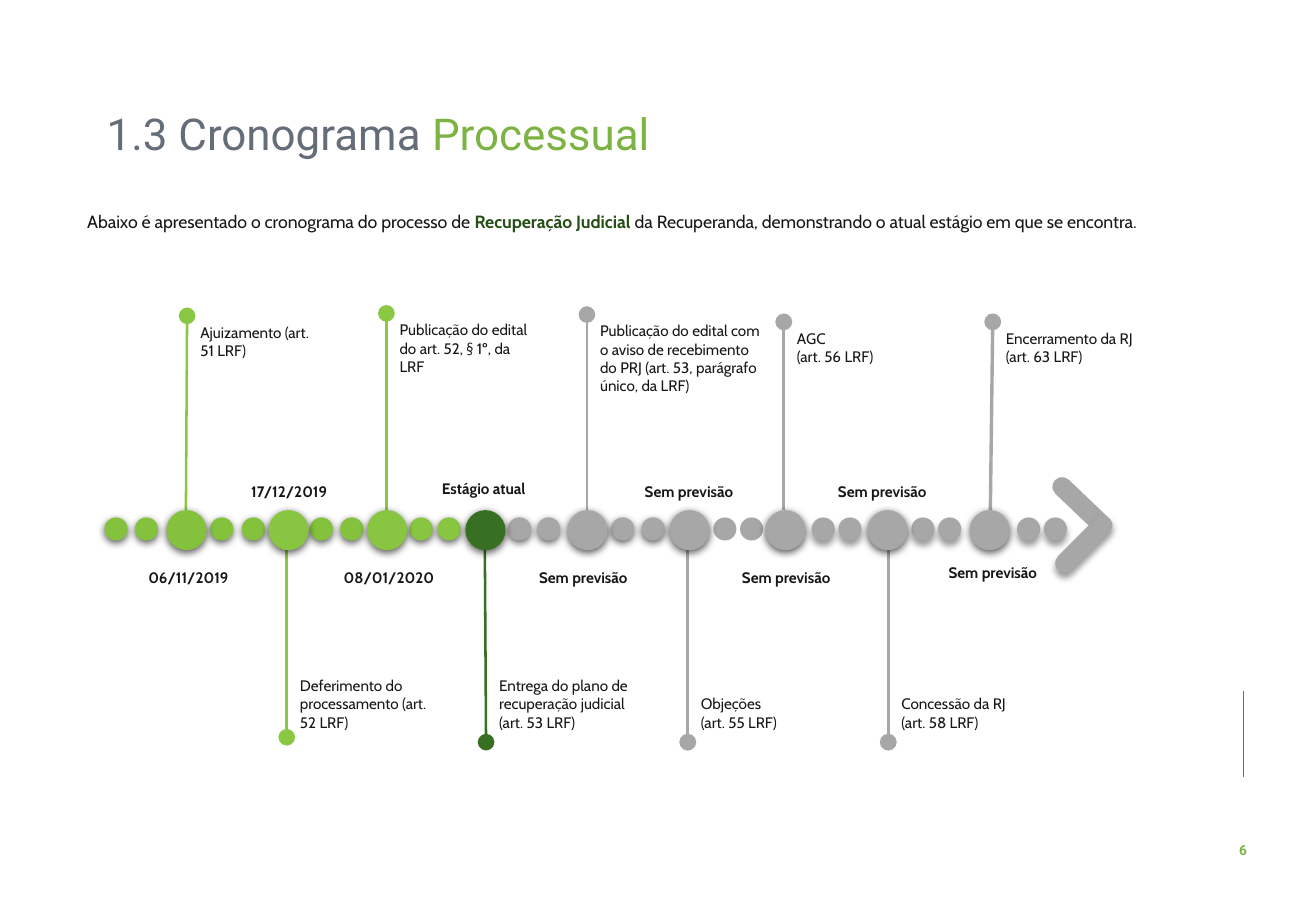
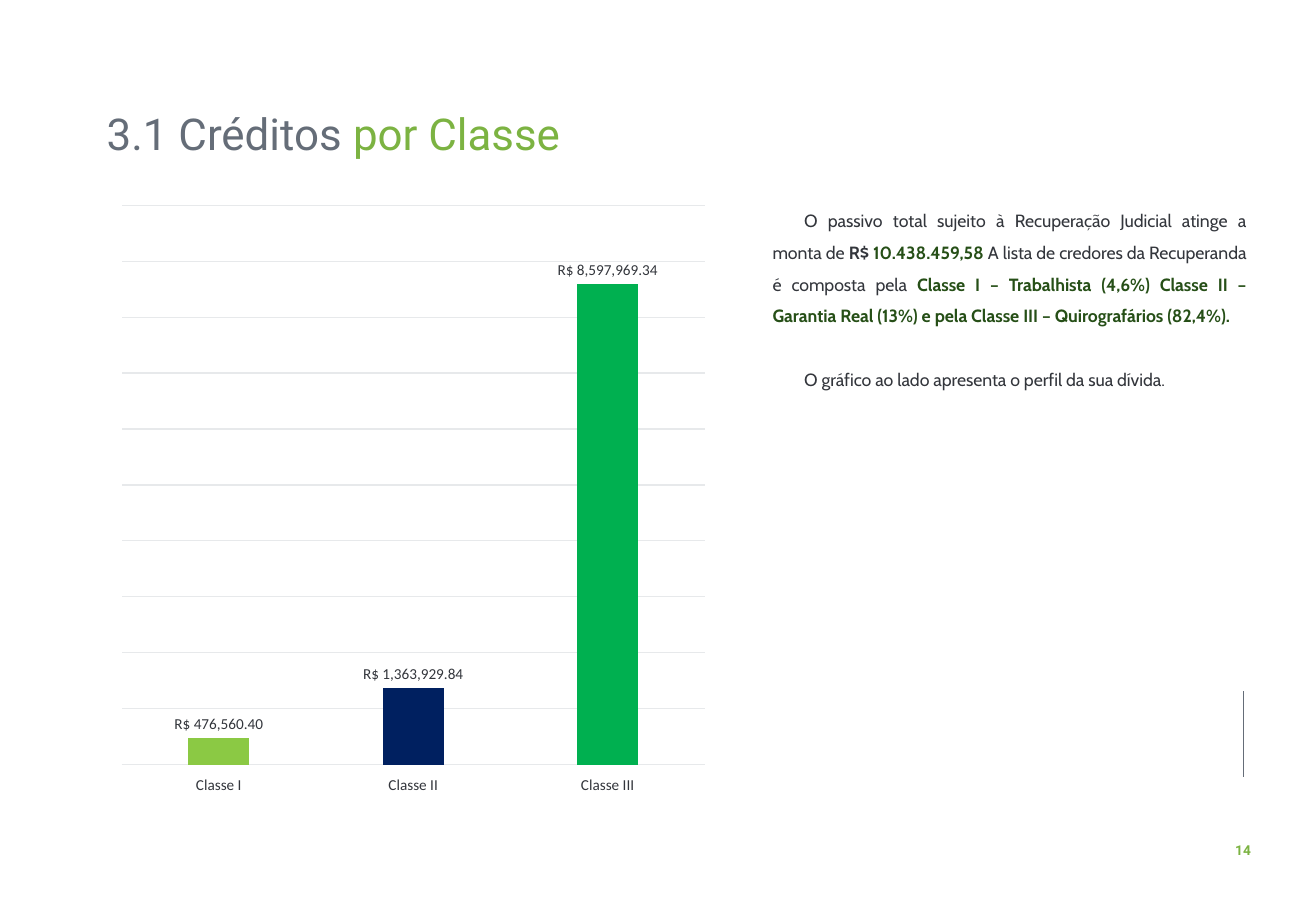
from pptx import Presentation
from pptx.chart.data import CategoryChartData
from pptx.dml.color import RGBColor
from pptx.enum.chart import XL_CHART_TYPE, XL_LABEL_POSITION, XL_TICK_LABEL_POSITION, XL_TICK_MARK
from pptx.enum.shapes import MSO_CONNECTOR, MSO_SHAPE
from pptx.enum.text import MSO_ANCHOR, PP_ALIGN
from pptx.oxml.ns import qn
from pptx.util import Pt
from lxml import etree

COLUMN = XL_CHART_TYPE.COLUMN_CLUSTERED
OUTSIDE = XL_LABEL_POSITION.OUTSIDE_END
NO_TICK, LOW = XL_TICK_MARK.NONE, XL_TICK_LABEL_POSITION.LOW
STRAIGHT = MSO_CONNECTOR.STRAIGHT
OVAL, PILL = MSO_SHAPE.OVAL, MSO_SHAPE.ROUNDED_RECTANGLE
TOP, MIDDLE, BOTTOM = MSO_ANCHOR.TOP, MSO_ANCHOR.MIDDLE, MSO_ANCHOR.BOTTOM
LEFT, CENTER, JUSTIFY = PP_ALIGN.LEFT, PP_ALIGN.CENTER, PP_ALIGN.JUSTIFY

SCALE = 9144  # EMU in one px, 100 px to the inch
SLATE, LEAF, INK, TEXT = "656D78", "7CB342", "181717", "33363C"
LIME, GRASS, MOSS, FOREST = "8AC843", "84C23D", "88C641", "377023"
DEEP, GREY, RULE = "264F17", "A7A7A7", "E7E9EB"
MONEY = '"R$"\\ #,##0.00'

TITLE = {"name": "Roboto", "size": Pt(26)}
NUMBER = {"name": "Roboto", "size": Pt(8.1), "bold": True}
BODY = {"name": "Cabin", "size": Pt(10.5)}
LABEL = {"name": "Cabin", "size": Pt(9)}
DATE = {**LABEL, "bold": True}
AXIS = {"name": "Calibri", "size": Pt(9)}

# opacity %, blur pt, distance pt
HARD, SOFT = (63, 4.5, 1.5), (40, 4, 3)

# dots between the stages: colour, shadow, left edges
DOTS = [
    (GRASS, HARD, (6, 31, 93, 119, 175, 200)),
    (MOSS, HARD, (257, 280)),
    (GREY, HARD, (338, 362, 423, 448)),
    (GREY, None, (507, 529)),
    (GREY, SOFT, (588, 610, 670, 692, 757, 779)),
]

# stage: circle left, foot x, tip x, tip y, label size, date centre, date top,
# circle colour, stem colour, stem width, date, label
STAGES = [
    (57, 73, 74, 10, (111, 40), 75, 213, GRASS, LIME, 1.5,
     "06/11/2019", "Ajuizamento (art. 51 LRF)"),
    (141, 156, 156, 357, (137, 56), 158, 142, MOSS, LIME, 1.5,
     "17/12/2019", "Deferimento do processamento (art. 52 LRF)"),
    (222, 238, 238, 8, (130, 56), 240, 213, MOSS, LIME, 1.5,
     "08/01/2020", "Publicação do edital do art. 52, § 1º, da LRF"),
    (303, 319, 320, 361, (140, 56), 318, 140, FOREST, FOREST, 1.5,
     "Estágio atual", "Entrega do plano de recuperação judicial (art. 53 LRF)"),
    (387, 403, 403, 9, (156, 71), 400, 213, GREY, GREY, 1.5, "Sem previsão",
     "Publicação do edital com o aviso de recebimento do PRJ (art. 53, parágrafo único, da LRF)"),
    (471, 486, 486, 361, (110, 40), 487, 142, GREY, GREY, 2,
     "Sem previsão", "Objeções\n(art. 55 LRF)"),
    (550, 565, 565, 15, (110, 40), 567, 213, GREY, GREY, 2,
     "Sem previsão", "AGC\n(art. 56 LRF)"),
    (634, 651, 651, 361, (133, 40), 646, 142, GREY, GREY, 2,
     "Sem previsão", "Concessão da RJ\n(art. 58 LRF)"),
    (718, 735, 737, 15, (158, 40), 737, 209, GREY, GREY, 2,
     "Sem previsão", "Encerramento da RJ\n(art. 63 LRF)"),
]


def px(*nums):
    return [round(n * SCALE) for n in nums]


def tint(target, color):
    target.rgb = RGBColor.from_string(color)


def style(font, form, color):
    for key, value in form.items():
        setattr(font, key, value)
    tint(font.color, color)


def write(slide, box, paras, form, align=LEFT, anchor=TOP, wrap=True,
          space=1, indent=0, gap=0):
    """Each paragraph is a list of (text, colour, bold) runs; bold may be None."""
    frame = slide.shapes.add_textbox(*px(*box)).text_frame
    frame.word_wrap, frame.vertical_anchor = wrap, anchor
    for i, runs in enumerate(paras):
        para = frame.add_paragraph() if i else frame.paragraphs[0]
        para.alignment, para.line_spacing = align, space
        if indent:
            para._p.get_or_add_pPr().set("indent", str(px(indent)[0]))
        if i and gap:
            para.space_before = Pt(gap)
        for text, color, bold in runs:
            run = para.add_run()
            run.text = text
            style(run.font, form if bold is None else {**form, "bold": bold}, color)


def plain(text, color=INK):
    return [[(part, color, None)] for part in text.split("\n")]


def shape(slide, kind, box, color, shade=None):
    item = slide.shapes.add_shape(kind, *px(*box))
    item.shadow.inherit = False
    item.fill.solid()
    tint(item.fill.fore_color, color)
    item.line.fill.background()
    if shade:
        alpha, blur, dist = shade
        list_ = item._element.spPr.find(qn("a:effectLst"))
        outer = etree.SubElement(list_, qn("a:outerShdw"), blurRad=str(Pt(blur)),
                                 dist=str(Pt(dist)), dir="5400000",
                                 algn="t", rotWithShape="0")
        black = etree.SubElement(outer, qn("a:srgbClr"), val="000000")
        etree.SubElement(black, qn("a:alpha"), val=str(alpha * 1000))
    return item


def line(slide, ends, color, width, dot=False):
    item = slide.shapes.add_connector(STRAIGHT, *px(*ends))
    tint(item.line.color, color)
    item.line.width = Pt(width)
    if dot:
        etree.SubElement(item.line._get_or_add_ln(), qn("a:tailEnd"),
                         type="oval", w="lg", len="lg")
    etree.SubElement(item._element.spPr, qn("a:effectLst"))


def base(deck, lead, accent, number):
    """Blank slide with the shared title, side rule and page number."""
    slide = deck.slides.add_slide(deck.slide_layouts[6])
    line(slide, (1023, 569, 1023, 640), SLATE, 0.5)
    write(slide, (1006, 688, 34, 24), plain(number, LEAF), NUMBER, CENTER, wrap=False)
    write(slide, (78, 86, 818, 53), [[(lead, SLATE, None), (accent, LEAF, None)]],
          TITLE, anchor=MIDDLE, space=0.9)
    return slide


def timeline(slide, x, y):
    # stems, labels and dates
    for _, foot, tip, end, size, mid, top, _, color, width, date, label in STAGES:
        above = end < 170
        wide, high = size
        line(slide, (x + foot, y + (170 if above else 200), x + tip, y + end),
             color, width, dot=True)
        write(slide, (x + tip + 1, y + (end + 1 if above else 357 - high), wide, high),
              plain(label), LABEL, anchor=TOP if above else BOTTOM)
        write(slide, (x + mid - 60, y + top, 120, 25), plain(date), DATE, CENTER)
    # small dots
    for color, shade, lefts in DOTS:
        for left in lefts:
            shape(slide, OVAL, (x + left, y + 176, 19, 19), color, shade)
    # arrow tip
    for left, top, turn, shade in ((780, 158, 43.7, None), (782, 190, 315, SOFT)):
        bar = shape(slide, PILL, (x + left, y + top, 60, 16), GREY, shade)
        bar.adjustments[0] = 0.5
        bar.rotation = turn
    # stage circles
    for stage in STAGES:
        shape(slide, OVAL, (x + stage[0], y + 170, 33, 33), stage[7], HARD)


def bars(slide, box):
    data = CategoryChartData(number_format=MONEY)
    data.categories = ["Classe I", "Classe II", "Classe III"]
    data.add_series("Series 1", (476560.4, 1363929.84, 8597969.34))
    chart = slide.shapes.add_chart(COLUMN, *px(*box), data).chart
    chart.has_legend = chart.has_title = False
    style(chart.font, {**AXIS, "size": Pt(10)}, TEXT)
    # axes
    cats, vals = chart.category_axis, chart.value_axis
    cats.major_tick_mark = NO_TICK
    cats.tick_label_position = LOW
    style(cats.tick_labels.font, AXIS, TEXT)
    vals.visible = False
    vals.minimum_scale, vals.maximum_scale, vals.major_unit = 0, 10000000, 1000000
    vals.has_major_gridlines = True
    for part in (cats.format.line, vals.major_gridlines.format.line):
        tint(part.color, RULE)
        part.width = Pt(0.75)
    # columns and their labels
    plot = chart.plots[0]
    plot.gap_width, plot.overlap, plot.vary_by_categories = 219, -27, False
    series = plot.series[0]
    for i, color in enumerate(("8BC944", "002060", "00B050")):
        fill = series.points[i].format.fill
        fill.solid()
        tint(fill.fore_color, color)
    labels = series.data_labels
    form = {"show_value": True, "number_format": MONEY,
            "number_format_is_linked": False, "position": OUTSIDE}
    for key, value in form.items():
        setattr(labels, key, value)
    style(labels.font, AXIS, TEXT)


def schedule(deck):
    slide = base(deck, "1.3 Cronograma ", "Processual", "6")
    write(slide, (31, 166, 1017, 30), [[
        ("Abaixo é apresentado o cronograma do processo de ", INK, False),
        ("Recuperação Judicial ", DEEP, True),
        ("da Recuperanda, demonstrando o atual estágio em que se encontra.", INK, False),
    ]], BODY, JUSTIFY, space=1.14, indent=31)
    timeline(slide, 80, 250)


def credits(deck):
    slide = base(deck, "3.1 Créditos ", "por Classe", "14")
    write(slide, (626, 159, 410, 193), [[
        ("O passivo total sujeito à Recuperação Judicial atinge a monta de ", TEXT, False),
        ("R$ ", TEXT, True),
        ("10.438.459,58", DEEP, True),
        (" A lista de credores da Recuperanda é composta pela ", TEXT, False),
        ("Classe I – Trabalhista (4,6%) Classe II – Garantia Real (13%) "
         "e pela Classe III – Quirografários (82,4%).", DEEP, True),
    ], [
        ("O gráfico ao lado apresenta o perfil da sua dívida.", TEXT, False),
    ]], BODY, JUSTIFY, space=1.5, indent=26, gap=19)
    bars(slide, (90, 159, 500, 505))


def main():
    deck = Presentation()
    deck.slide_width, deck.slide_height = px(1083, 750)
    schedule(deck)
    credits(deck)
    deck.save("out.pptx")


if __name__ == "__main__":
    main()
